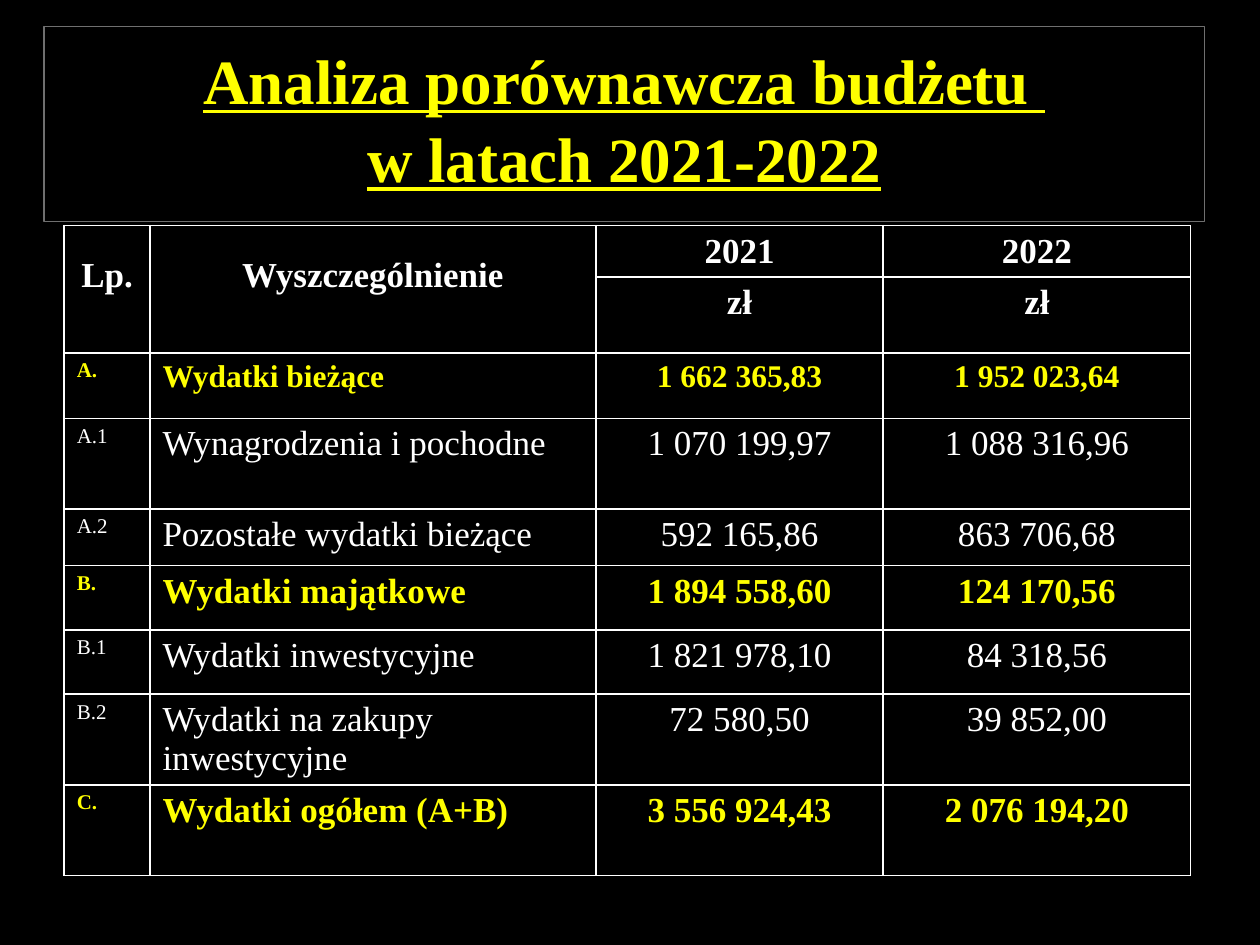
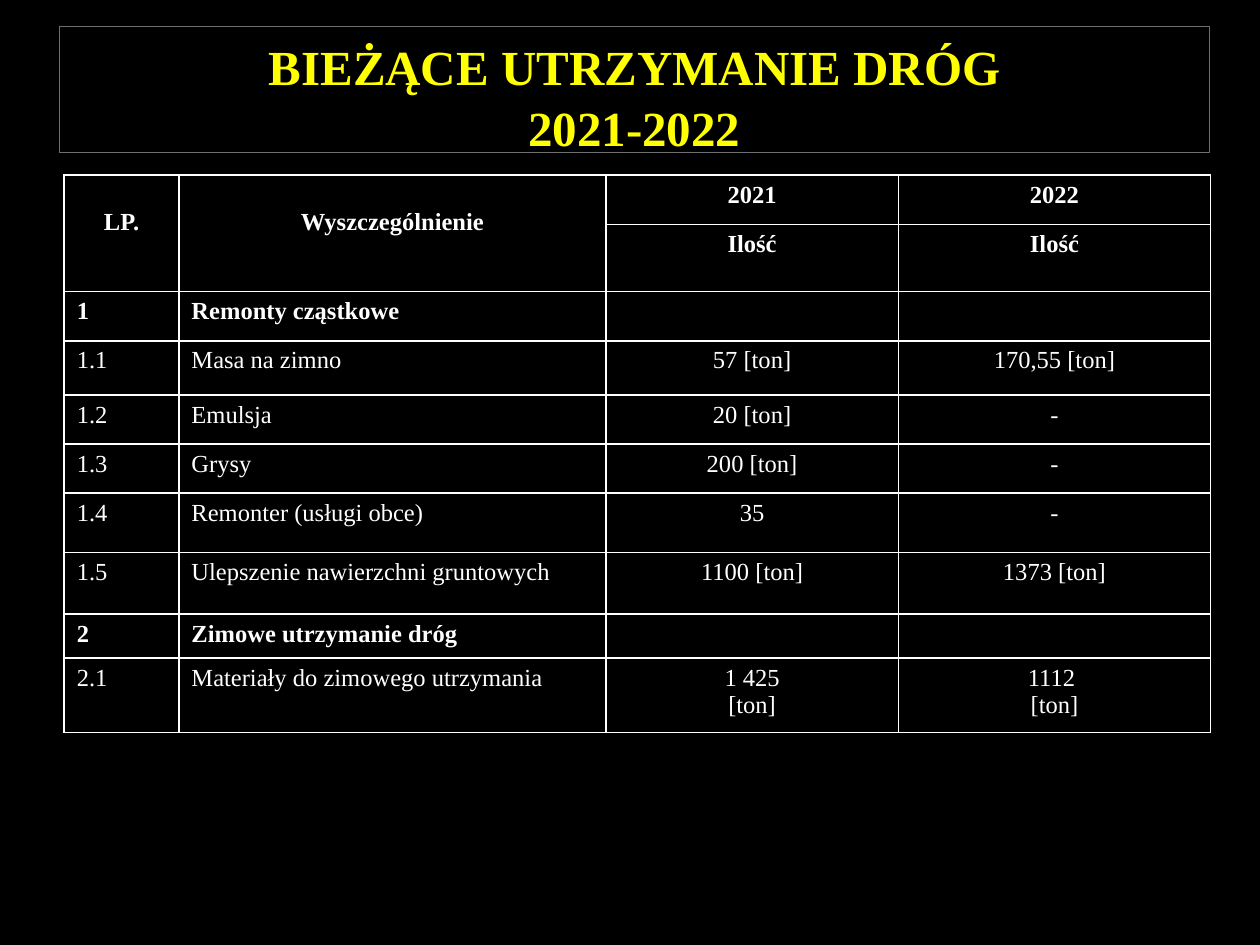
from lxml.etree import SubElement
from pptx import Presentation
from pptx.dml.color import RGBColor
from pptx.enum.shapes import MSO_SHAPE
from pptx.enum.text import MSO_ANCHOR, PP_ALIGN
from pptx.oxml.ns import qn
from pptx.util import Inches, Pt

BLACK = RGBColor(0x00, 0x00, 0x00)
WHITE = RGBColor(0xFF, 0xFF, 0xFF)
YELLOW = RGBColor(0xFF, 0xFF, 0x00)
GREY = RGBColor(0x6F, 0x6F, 0x6F)
FONT = "Times New Roman"


def add_title(slide, text, box, size, top_margin, underline):
    title = slide.shapes.add_shape(MSO_SHAPE.RECTANGLE, *map(Inches, box))
    title.shadow.inherit = False
    title.fill.background()
    title.line.color.rgb = GREY
    title.line.width = Pt(0.75)
    frame = title.text_frame
    frame.word_wrap = True
    frame.vertical_anchor = MSO_ANCHOR.TOP
    frame.margin_top = Inches(top_margin)
    frame.text = text
    heading = frame.paragraphs[0]
    heading.alignment = PP_ALIGN.CENTER
    heading.line_spacing = 1.03
    for run in heading.runs:
        run.font.name = FONT
        run.font.size = Pt(size)
        run.font.bold = True
        run.font.underline = underline
        run.font.color.rgb = YELLOW


def style_cell(cell, size, bold, color, centred):
    cell.fill.solid()
    cell.fill.fore_color.rgb = BLACK
    for paragraph in cell.text_frame.paragraphs:
        paragraph.alignment = PP_ALIGN.CENTER if centred else PP_ALIGN.LEFT
        for run in paragraph.runs:
            run.font.name = FONT
            run.font.size = Pt(size)
            run.font.bold = bold
            run.font.color.rgb = color
        if not paragraph.runs:
            paragraph._p.get_or_add_endParaRPr().set("sz", str(size * 100))
    properties = cell._tc.get_or_add_tcPr()
    for position, side in enumerate(("lnL", "lnR", "lnT", "lnB")):
        border = SubElement(properties, qn(f"a:{side}"), w=str(Pt(1)))
        fill = SubElement(border, qn("a:solidFill"))
        SubElement(fill, qn("a:srgbClr"), val=str(WHITE))
        properties.insert(position, border)


BUDGET_ROWS = [
    ("Lp.", "Wyszczególnienie", "2021", "2022"),
    ("", "", "zł", "zł"),
    ("A.", "Wydatki bieżące", "1 662 365,83", "1 952 023,64"),
    ("A.1", "Wynagrodzenia i pochodne", "1 070 199,97", "1 088 316,96"),
    ("A.2", "Pozostałe wydatki bieżące", "592 165,86", "863 706,68"),
    ("B.", "Wydatki majątkowe", "1 894 558,60", "124 170,56"),
    ("B.1", "Wydatki inwestycyjne", "1 821 978,10", "84 318,56"),
    ("B.2", "Wydatki na zakupy inwestycyjne", "72 580,50", "39 852,00"),
    ("C.", "Wydatki ogółem (A+B)", "3 556 924,43", "2 076 194,20"),
]
ROAD_ROWS = [
    ("LP.", "Wyszczególnienie", "2021", "2022"),
    ("", "", "Ilość", "Ilość"),
    ("1", "Remonty cząstkowe", "", ""),
    ("1.1", "Masa na zimno", "57 [ton]", "170,55 [ton]"),
    ("1.2", "Emulsja", "20 [ton]", "-"),
    ("1.3", "Grysy", "200 [ton]", "-"),
    ("1.4", "Remonter (usługi obce)", "35", "-"),
    ("1.5", "Ulepszenie nawierzchni gruntowych", "1100 [ton]", "1373 [ton]"),
    ("2", "Zimowe utrzymanie dróg", "", ""),
    ("2.1", "Materiały do zimowego utrzymania", "1 425\v[ton]", "1112 \n[ton]"),
]
SLIDES = [
    {
        "title": ("Analiza porównawcza budżetu \vw latach 2021-2022",
                  (0.35, 0.21, 9.21, 1.55), 36, 0.1, True),
        "rows": BUDGET_ROWS,
        "top": 1.79,
        "widths": (0.68, 3.54, 2.28, 2.44),
        "heights": (0.41, 0.6, 0.52, 0.72, 0.45, 0.51, 0.51, 0.72, 0.72),
        "size": 20,
        "number_size": 12,
        "row_sizes": {"A.": 18},
        "group_color": YELLOW,
        "groups": ("A.", "B.", "C."),
        "header_margin": 0.24,
    },
    {
        "title": ("BIEŻĄCE UTRZYMANIE DRÓG\v2021-2022",
                  (0.47, 0.21, 9.13, 1), 28, 0.07, False),
        "rows": ROAD_ROWS,
        "top": 1.39,
        "widths": (0.91, 3.39, 2.32, 2.48),
        "heights": (0.39, 0.53, 0.39, 0.43, 0.39, 0.39, 0.47, 0.49, 0.35, 0.59),
        "size": 14,
        "number_size": 14,
        "row_sizes": {},
        "group_color": WHITE,
        "groups": ("1", "2"),
        "header_margin": 0.27,
    },
]

presentation = Presentation()
presentation.slide_width = Inches(10)
presentation.slide_height = Inches(7.5)

for content in SLIDES:
    slide = presentation.slides.add_slide(presentation.slide_layouts[6])
    slide.background.fill.solid()
    slide.background.fill.fore_color.rgb = BLACK
    add_title(slide, *content["title"])

    rows, widths, heights = content["rows"], content["widths"], content["heights"]
    table = slide.shapes.add_table(
        len(rows), len(widths), Inches(0.51), Inches(content["top"]),
        Inches(sum(widths)), Inches(sum(heights))).table
    table.first_row = False
    table.horz_banding = False
    for column, width in zip(table.columns, widths):
        column.width = Inches(width)
    for table_row, height in zip(table.rows, heights):
        table_row.height = Inches(height)

    for row_index, values in enumerate(rows):
        number = values[0]
        header = row_index < 2
        group = number in content["groups"]
        color = content["group_color"] if group else WHITE
        for column_index, value in enumerate(values):
            size = content["row_sizes"].get(number, content["size"])
            if column_index == 0 and not header:
                size = content["number_size"]
            cell = table.cell(row_index, column_index)
            cell.text_frame.text = value
            style_cell(cell, size, header or group, color, header or column_index > 1)

    for column_index in range(2):
        heading = table.cell(0, column_index)
        heading.merge(table.cell(1, column_index))
        heading.margin_top = Inches(content["header_margin"])

presentation.save("out.pptx")
